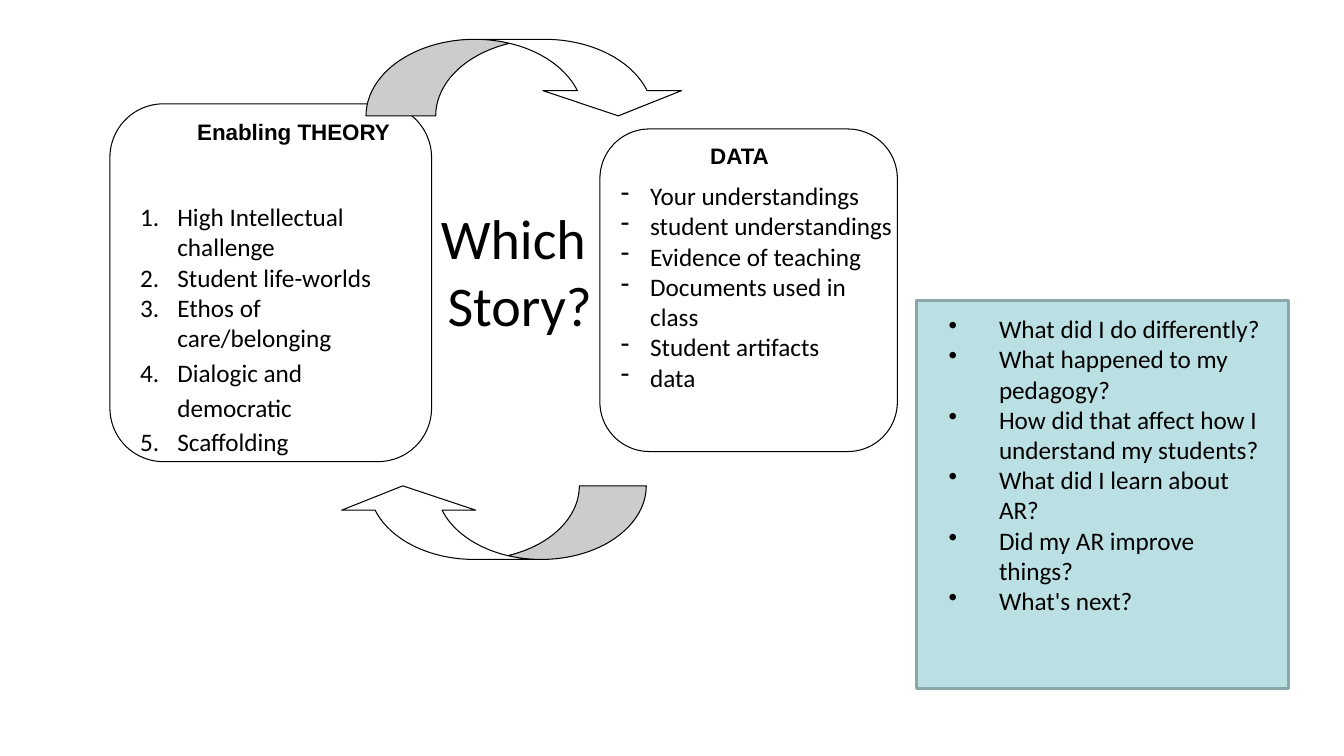
"""Builds the slide that links enabling theory and data through a story."""
from lxml import etree
from pptx import Presentation
from pptx.dml.color import RGBColor
from pptx.enum.shapes import MSO_SHAPE
from pptx.enum.text import MSO_ANCHOR, PP_ALIGN
from pptx.oxml.ns import qn
from pptx.util import Inches, Pt

BLACK = RGBColor(0x00, 0x00, 0x00)
WHITE = RGBColor(0xFF, 0xFF, 0xFF)
PALE_TEAL = RGBColor(0xBB, 0xE0, 0xE3)
TEAL_EDGE = RGBColor(0x8A, 0xA6, 0xA8)

RECTANGLE = MSO_SHAPE.RECTANGLE
CARD = MSO_SHAPE.FLOWCHART_ALTERNATE_PROCESS
CURVED_ARROW = MSO_SHAPE.CURVED_DOWN_ARROW
TOP = MSO_ANCHOR.TOP
LEFT = PP_ALIGN.LEFT
CENTER = PP_ALIGN.CENTER

DASH = ("a:buChar", {"char": "-"})
DOT = ("a:buChar", {"char": "•"})
NUMBER = ("a:buAutoNum", {"type": "arabicPeriod"})

THEORIES = [
    "High Intellectual challenge",
    "Student life-worlds",
    "Ethos of care/belonging",
    "Dialogic and democratic",
    "Scaffolding",
]
DATA_SOURCES = [
    "Your understandings",
    "student understandings",
    "Evidence of teaching",
    "Documents used in class",
    "Student artifacts",
    "data",
]
QUESTIONS = [
    "What did I do differently?",
    "What happened to my pedagogy?",
    "How did that affect how I understand my students?",
    "What did I learn about AR?",
    "Did my AR improve things?",
    "What's next?",
]


class StorySlide:
    """Holds the text style and the slide, and draws its elements."""

    body_font = "Calibri"
    heading_font = "Arial"
    body_size = 18

    def __init__(self, page):
        """Keep the slide that receives the elements."""
        self.page = page

    def shape(self, kind, place, fill=WHITE, edge=BLACK, width=0.75):
        """Add a filled and outlined preset shape."""
        shape = self.page.shapes.add_shape(kind, *map(Inches, place))
        shape.shadow.inherit = False
        shape.fill.solid()
        shape.fill.fore_color.rgb = fill
        shape.line.color.rgb = edge
        shape.line.width = Pt(width)
        return shape

    def card(self, place, heading, inset):
        """Add a rounded card with a heading set in from its left edge."""
        frame = self.shape(CARD, place).text_frame
        frame.vertical_anchor = TOP
        frame.margin_left = Inches(inset)
        frame.margin_right = 0
        frame.text = heading
        para = frame.paragraphs[0]
        para.alignment = LEFT
        para.line_spacing = Pt(15)
        self.style(para, 16, self.heading_font, True)

    def arrow(self, place, adjustments, rotation=0):
        """Add a curved arrow."""
        arrow = self.shape(CURVED_ARROW, place)
        arrow.rotation = rotation
        for index, value in enumerate(adjustments):
            arrow.adjustments[index] = value

    def text(self, place, lines, size=body_size, alignment=LEFT):
        """Add a wrapping text box and return its paragraphs."""
        frame = self.page.shapes.add_textbox(*map(Inches, place)).text_frame
        frame.word_wrap = True
        frame.text = "\n".join(lines)
        for para in frame.paragraphs:
            para.alignment = alignment
            self.style(para, size, self.body_font)
        return frame.paragraphs

    def bullets(self, place, lines, marker, indent, hanging):
        """Add a list whose markers hang to the left of its text."""
        paragraphs = self.text(place, lines)
        tag, attributes = marker
        for para in paragraphs:
            properties = para._p.get_or_add_pPr()
            properties.set("marL", str(Inches(indent)))
            properties.set("indent", str(-Inches(hanging)))
            etree.SubElement(properties, qn(tag), attributes)
        return paragraphs

    def style(self, para, size, font, bold=False):
        """Format every run of a paragraph."""
        for span in para.runs:
            span.font.name = font
            span.font.size = Pt(size)
            span.font.bold = bold
            span.font.color.rgb = BLACK


def main():
    """Build and save the deck."""
    deck = Presentation()
    deck.slide_width = Inches(13.33)
    deck.slide_height = Inches(7.5)
    story = StorySlide(deck.slides.add_slide(deck.slide_layouts[6]))

    story.shape(RECTANGLE, (9.09, 2.98, 3.69, 3.85), PALE_TEAL, TEAL_EDGE, 2)
    story.card((1.09, 1.03, 3.19, 3.55), "Enabling THEORY", 0.71)
    story.card((5.95, 1.28, 2.95, 3.2), "DATA", 0.95)
    story.arrow((3.63, 0.39, 3.19, 0.76), (0.91, 1.81, 0.33))
    story.arrow((3.33, 4.82, 3.08, 0.73), (0.91, 1.82, 0.33), 180)

    story.bullets((6.05, 1.74, 2.95, 2.52), DATA_SOURCES, DASH, 0.3, 0.29)
    theories = story.bullets((1.29, 1.95, 2.75, 2.96), THEORIES, NUMBER, 0.37, 0.37)
    for para in theories[3:]:
        para.line_spacing = 1.15
    story.text((4.17, 1.97, 1.97, 1.45), ["Which ", "Story?"], 40, CENTER)
    story.bullets((9.31, 3.06, 3.35, 3.43), QUESTIONS, DOT, 0.5, 0.5)

    deck.save("out.pptx")


if __name__ == "__main__":
    main()
